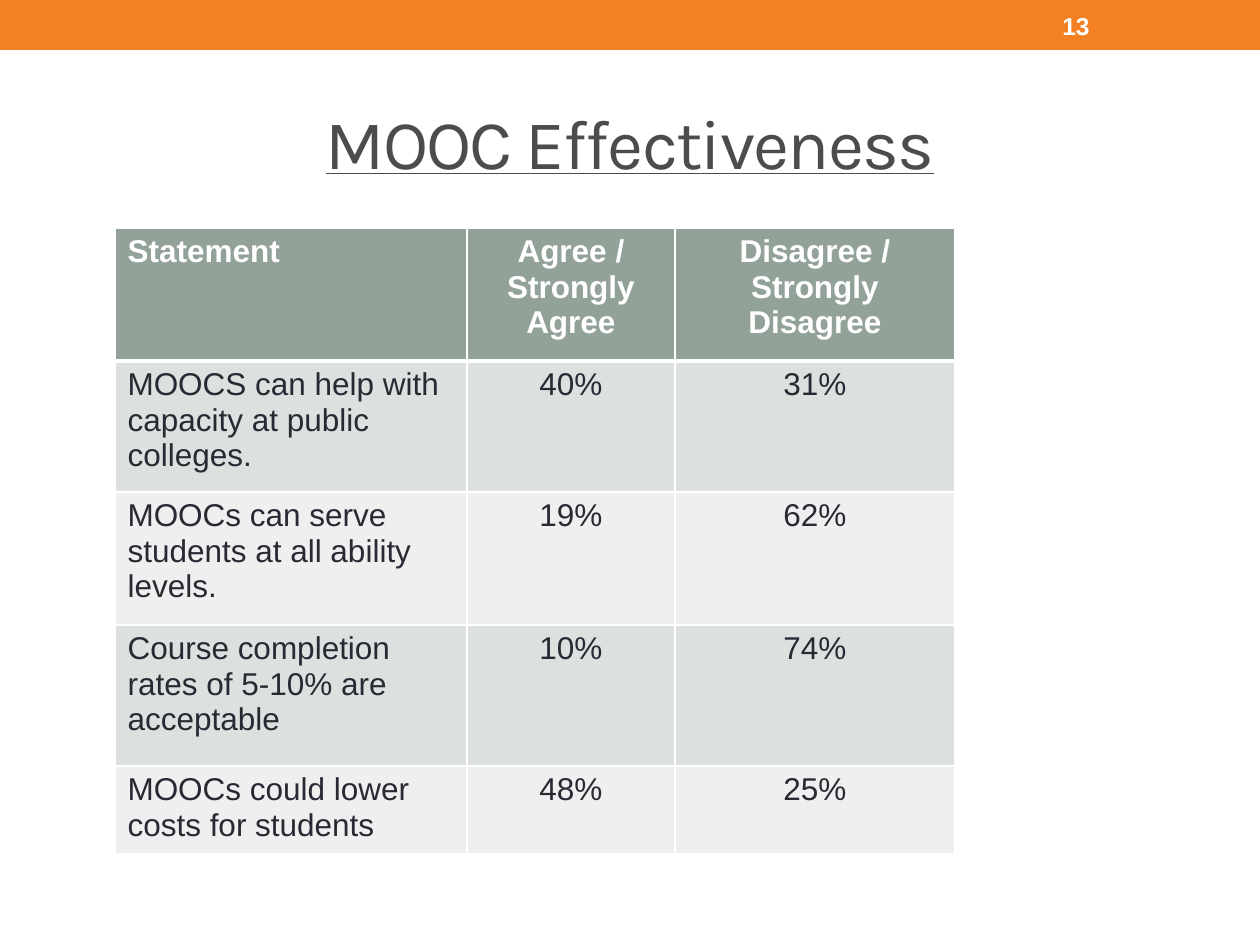
from lxml import etree
from pptx import Presentation
from pptx import util as u
from pptx.dml.color import RGBColor
from pptx.enum import shapes, text
from pptx.oxml.ns import qn

PX = u.Inches(1) // 126
COLORS = {
    "band": "F48024",
    "title": "4C4C4C",
    "header": "93A299",
    "odd_row": "DCE0DE",
    "even_row": "EEF0EF",
    "ink": "292934",
    "white": "FFFFFF",
}
SURVEY = [
    ("Statement", "Agree / Strongly Agree", "Disagree / Strongly Disagree"),
    ("MOOCS can help with capacity at public colleges.", "40%", "31%"),
    ("MOOCs can serve students at all ability levels.", "19%", "62%"),
    ("Course completion rates of 5-10% are acceptable", "10%", "74%"),
    ("MOOCs could lower costs for students", "48%", "25%"),
]
COLUMN_WIDTHS = [352, 208, 280]
ROW_HEIGHTS = [133, 131, 133, 141, 82]


def px(*lengths):
    return [length * PX for length in lengths]


def rgb(name):
    return RGBColor.from_string(COLORS[name])


def style(paragraph, size, color, face="Arial", bold=False, align=text.PP_ALIGN.LEFT):
    paragraph.alignment = align
    for run in paragraph.runs:
        run.font.name = face
        run.font.size = u.Pt(size)
        run.font.bold = bold
        run.font.color.rgb = rgb(color)


def add_line_of_text(slide, box, words):
    """Add a vertically centred text box and return its paragraph."""
    frame = slide.shapes.add_textbox(*px(*box)).text_frame
    frame.word_wrap = True
    frame.vertical_anchor = text.MSO_ANCHOR.MIDDLE
    frame.text = words
    return frame.paragraphs[0]


def add_top_band(slide, left, top, width, height):
    band = slide.shapes.add_shape(
        shapes.MSO_SHAPE.RECTANGLE, *px(left, top, width, height))
    band.shadow.inherit = False
    band.fill.solid()
    band.fill.fore_color.rgb = rgb("band")
    band.line.fill.background()
    page_number = add_line_of_text(
        slide, (left + 1050, top + 3, 147, height - 5), "13")
    style(page_number, 14, "white", bold=True)


def add_title(slide, *box):
    title = add_line_of_text(slide, box, "MOOC Effectiveness")
    style(title, 40, "title", face="Karla", align=text.PP_ALIGN.CENTER)
    run = title.runs[0]
    run.font.underline = True
    run.font._element.set("spc", "-100")


def add_borders(cell, top, bottom):
    """Draw white cell edges; top and bottom are widths in points."""
    properties = cell._tc.get_or_add_tcPr()
    for edge, width in (("L", 1), ("R", 1), ("T", top), ("B", bottom)):
        line = etree.SubElement(properties, qn(f"a:ln{edge}"), w=str(u.Pt(width)))
        fill = etree.SubElement(line, qn("a:solidFill"))
        etree.SubElement(fill, qn("a:srgbClr"), val=COLORS["white"])


def add_survey_table(slide, left, top):
    table = slide.shapes.add_table(
        len(SURVEY), len(COLUMN_WIDTHS),
        *px(left, top, sum(COLUMN_WIDTHS), sum(ROW_HEIGHTS))).table
    for column, width in zip(table.columns, COLUMN_WIDTHS):
        column.width = width * PX
    for r, (answers, height) in enumerate(zip(SURVEY, ROW_HEIGHTS)):
        table.rows[r].height = height * PX
        is_header = r == 0
        row_fill = "header" if is_header else "odd_row" if r % 2 else "even_row"
        for c, words in enumerate(answers):
            cell = table.cell(r, c)
            cell.text = words
            style(cell.text_frame.paragraphs[0], 18,
                  "white" if is_header else "ink", bold=is_header,
                  align=text.PP_ALIGN.CENTER if c else text.PP_ALIGN.LEFT)
            add_borders(cell, top=3 if r == 1 else 1, bottom=3 if is_header else 1)
            cell.fill.solid()
            cell.fill.fore_color.rgb = rgb(row_fill)


def main():
    deck = Presentation()
    deck.slide_width, deck.slide_height = px(1260, 945)
    slide = deck.slides.add_slide(deck.slide_layouts[6])
    add_top_band(slide, 0, 0, 1260, 50)
    add_title(slide, 63, 73, 1134, 136)
    add_survey_table(slide, 115, 228)
    deck.save("out.pptx")


if __name__ == "__main__":
    main()
